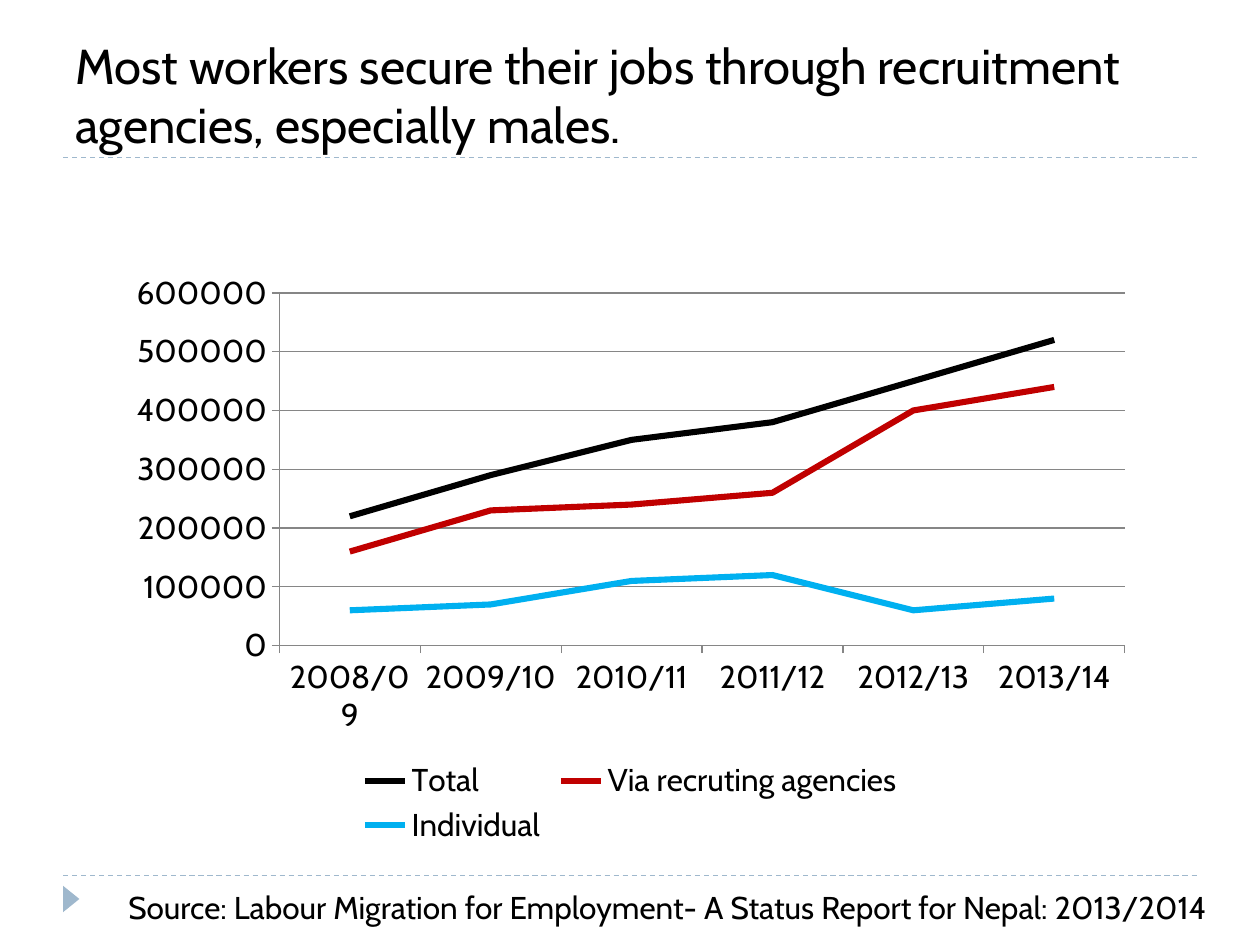
from pptx import Presentation
from pptx.chart.data import CategoryChartData as ChartData
from pptx.dml.color import RGBColor
from pptx.enum.chart import XL_CHART_TYPE as Kind, XL_LEGEND_POSITION as Place, XL_TICK_MARK as Tick
from pptx.enum.dml import MSO_LINE as Dash
from pptx.enum.shapes import MSO_CONNECTOR as Link, MSO_SHAPE as Shape
from pptx.enum.text import MSO_ANCHOR as Anchor
from pptx.oxml.ns import qn
from pptx.util import Inches, Pt
from lxml import etree


def color(part, code):
    if hasattr(part, "solid"):
        part.solid()
        part = part.fore_color
    else:
        part = part.color
    part.rgb = RGBColor.from_string(code)


def write(text, size, left, top, width, height):
    box = slide.shapes.add_textbox(Inches(left), Inches(top), Inches(width), Inches(height))
    frame = box.text_frame
    frame.word_wrap = True
    para = frame.paragraphs[0]
    para.text = text
    para.font.name = "Cabin"
    para.font.size = Pt(size)
    color(para.font, "000000")
    return frame


deck = Presentation()
deck.slide_width = Inches(10)
deck.slide_height = Inches(7.5)
slide = deck.slides.add_slide(deck.slide_layouts[6])

for y in (6.95, 1.25):
    rule = slide.shapes.add_connector(Link.STRAIGHT, Inches(0.5), Inches(y), Inches(9.5), Inches(y))
    color(rule.line, "9FB8CD")
    rule.line.width = Pt(0.75)
    rule.line.dash_style = Dash.DASH
    etree.SubElement(rule._element.spPr, qn("a:effectLst"))

arrow = slide.shapes.add_shape(Shape.ISOSCELES_TRIANGLE, Inches(0.46), Inches(7.07), Inches(0.21), Inches(0.13))
arrow.rotation = 90
arrow.shadow.inherit = False
color(arrow.fill, "9FB8CD")
arrow.line.fill.background()

series = [
    ("Total", "000000", (220000, 290000, 350000, 380000, 450000, 520000)),
    ("Via recruting agencies", "C00000", (160000, 230000, 240000, 260000, 400000, 440000)),
    ("Individual", "00B0F0", (60000, 70000, 110000, 120000, 60000, 80000)),
]
data = ChartData()
data.categories = ["2008/09", "2009/10", "2010/11", "2011/12", "2012/13", "2013/14"]
for name, code, vals in series:
    data.add_series(name, vals)
chart = slide.shapes.add_chart(
    Kind.LINE, Inches(0.92), Inches(2.08), Inches(8.17), Inches(4.67), data
).chart
chart.has_title = False
chart.font.name = "Cabin"
chart.font.size = Pt(18)
color(chart.font, "000000")
chart.has_legend = True
chart.legend.position = Place.BOTTOM
chart.legend.include_in_layout = False
chart.plots[0].vary_by_categories = False
for line, (name, code, vals) in zip(chart.plots[0].series, series):
    line.smooth = False
    color(line.format.line, code)
    line.format.line.width = Pt(3.5)

value = chart.value_axis
value.minimum_scale = 0
value.maximum_scale = 600000
value.major_unit = 100000
value.has_major_gridlines = True
for axis in (value, chart.category_axis):
    axis.major_tick_mark = Tick.OUTSIDE
    axis.minor_tick_mark = Tick.NONE
for part in (value, value.major_gridlines, chart.category_axis):
    color(part.format.line, "868686")
    part.format.line.width = Pt(0.75)

title = write("Most workers secure their jobs through recruitment agencies, especially males.", 28, 0.5, 0.25, 9, 1)
title.vertical_anchor = Anchor.MIDDLE
title.paragraphs[0].space_before = Pt(6)
write("Source: Labour Migration for Employment- A Status Report for Nepal: 2013/2014", 18, 0.92, 7, 8.83, 0.4)

deck.save("out.pptx")
